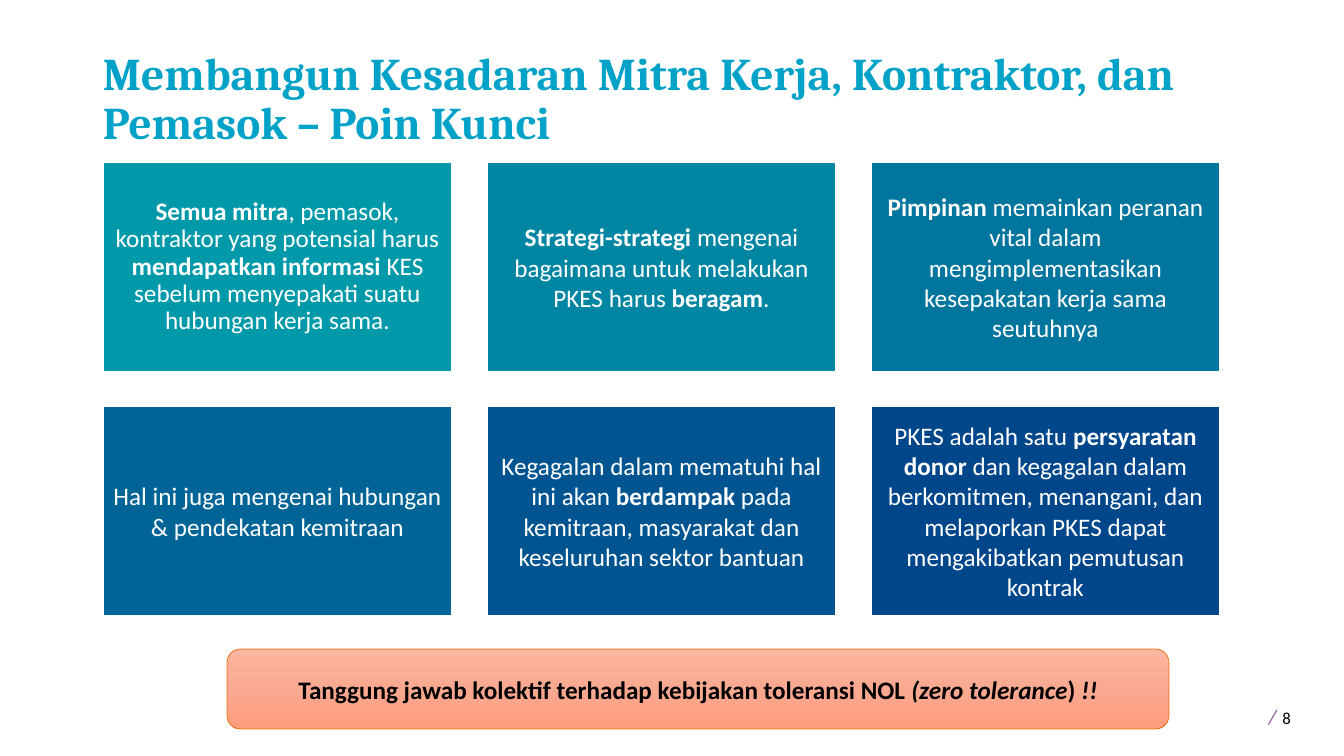
import copy

import pptx
import pptx.dml.color
import pptx.enum.shapes
import pptx.enum.text
import pptx.util

EMU_PER_PX = 914400 / 100.8
SHAPE = pptx.enum.shapes.MSO_SHAPE
ALIGN = pptx.enum.text.PP_ALIGN
ANCHOR = pptx.enum.text.MSO_ANCHOR


def px(n):
    return pptx.util.Emu(round(n * EMU_PER_PX))


def rgb(value):
    return pptx.dml.color.RGBColor.from_string(value)


def write(tf, runs, font="Calibri", size=18, color="000000", align=ALIGN.LEFT,
          anchor=ANCHOR.TOP, spacing=None, margin=None):
    """Fill a text frame; each run is (text, dict of font overrides)."""
    tf.word_wrap = True
    tf.vertical_anchor = anchor
    if margin is not None:
        tf.margin_left = tf.margin_right = px(margin)
        tf.margin_top = tf.margin_bottom = px(margin)
    p = tf.paragraphs[0]
    p.alignment = align
    if spacing:
        p.line_spacing = spacing
    for text, fmt in runs:
        r = p.add_run()
        r.text = text
        r.font.name = font
        r.font.size = pptx.util.Pt(fmt.get("size", size))
        r.font.bold = fmt.get("bold", False)
        r.font.italic = fmt.get("italic", False)
        r.font.color.rgb = rgb(fmt.get("color", color))


class Deck:
    def __init__(self, width, height):
        self.prs = pptx.Presentation()
        self.prs.slide_width, self.prs.slide_height = px(width), px(height)
        self.s = self.prs.slides.add_slide(self.prs.slide_layouts[6])

    def text(self, x, y, w, h, runs, **fmt):
        sp = self.s.shapes.add_textbox(px(x), px(y), px(w), px(h))
        write(sp.text_frame, runs, **fmt)

    def box(self, kind, x, y, w, h, line, weight, runs, fill=None, **fmt):
        sp = self.s.shapes.add_shape(kind, px(x), px(y), px(w), px(h))
        sp.shadow.inherit = False
        sp.line.color.rgb = rgb(line)
        sp.line.width = pptx.util.Pt(weight)
        if fill:
            sp.fill.solid()
            sp.fill.fore_color.rgb = rgb(fill)
        write(sp.text_frame, runs, align=ALIGN.CENTER, anchor=ANCHOR.MIDDLE, **fmt)
        return sp

    def gradient(self, sp, top, middle, bottom):
        sp.fill.gradient()
        sp.fill.gradient_angle = 270
        first = sp._element.spPr.find(".//" + pptx.oxml.ns.qn("a:gs"))
        first.addnext(copy.deepcopy(first))
        for stop, pos, color in zip(sp.fill.gradient_stops, (0, 0.5, 1),
                                    (top, middle, bottom)):
            stop.position = pos
            stop.color.rgb = rgb(color)


PLAIN = {}
BOLD = {"bold": True}
BOLD_ITALIC = {"bold": True, "italic": True}

# Fill, line spacing and text of each key point, row by row
POINTS = [
    ("0099A9", 0.9, [
        ("Semua mitra", BOLD),
        (", pemasok, kontraktor yang potensial harus ", PLAIN),
        ("mendapatkan informasi ", BOLD),
        ("KES sebelum menyepakati suatu hubungan kerja sama.", PLAIN)]),
    ("0086A3", 1.0, [
        ("Strategi-strategi ", BOLD),
        ("mengenai bagaimana untuk melakukan PKES harus ", PLAIN),
        ("beragam", BOLD), (".", PLAIN)]),
    ("00759D", 1.0, [
        ("Pimpinan ", BOLD),
        ("memainkan peranan vital dalam mengimplementasikan "
         "kesepakatan kerja sama seutuhnya", PLAIN)]),
    ("006497", 1.0, [
        ("Hal ini juga mengenai hubungan & pendekatan kemitraan", PLAIN)]),
    ("005591", 1.0, [
        ("Kegagalan dalam mematuhi hal ini akan ", PLAIN),
        ("berdampak", BOLD),
        (" pada kemitraan, masyarakat dan keseluruhan sektor bantuan", PLAIN)]),
    ("00468B", 1.0, [
        ("PKES adalah satu ", PLAIN),
        ("persyaratan donor ", BOLD),
        ("dan kegagalan dalam berkomitmen, menangani, dan melaporkan "
         "PKES dapat mengakibatkan pemutusan kontrak", PLAIN)]),
]


def main():
    deck = Deck(1344, 756)

    # Page number
    deck.text(1253, 694, 88, 40, [
        (" ", PLAIN),
        ("/", {"size": 15, "color": "9053A1", "italic": True}),
        (" ", PLAIN),
        ("8", {"size": 12})])

    # Title
    deck.text(93, 40, 1159, 114,
              [("Membangun Kesadaran Mitra Kerja, Kontraktor, dan "
                "Pemasok – Poin Kunci", BOLD)],
              font="Cambria", size=32.4, color="00A2C7",
              anchor=ANCHOR.BOTTOM, spacing=0.9)

    # Key points in a grid of three columns
    for i, (fill, spacing, runs) in enumerate(POINTS):
        row, col = divmod(i, 3)
        deck.box(SHAPE.RECTANGLE, 103 + 384 * col, 162 + 244 * row, 349, 210,
                 "FFFFFF", 1.5, runs, fill=fill, color="FFFFFF",
                 spacing=spacing, margin=7)

    # Closing message
    bar = deck.box(SHAPE.ROUNDED_RECTANGLE, 227, 649, 942, 80, "EF6E0B", 0.5, [
        ("Tanggung jawab kolektif terhadap kebijakan toleransi NOL ", BOLD),
        ("(zero tolerance", BOLD_ITALIC),
        (") ", BOLD),
        ("!!", BOLD_ITALIC)])
    deck.gradient(bar, "FCB59E", "FAA991", "FE9B7C")

    deck.prs.save("out.pptx")


if __name__ == "__main__":
    main()
